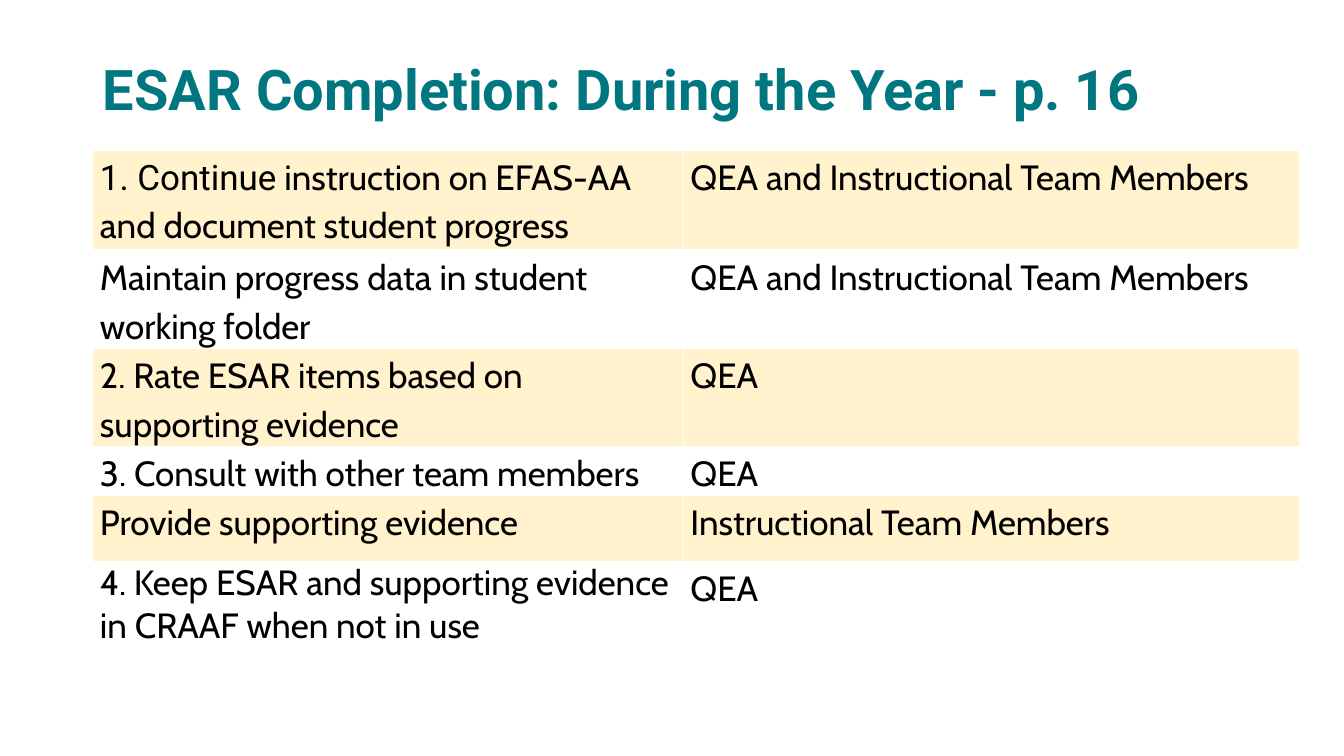
from dataclasses import dataclass

from lxml.etree import SubElement as Sub
from pptx import Presentation
from pptx.dml.color import RGBColor as Rgb
from pptx.enum.text import MSO_ANCHOR as Anchor, MSO_AUTO_SIZE as Fit, PP_ALIGN as Align
from pptx.oxml.ns import qn
from pptx.util import Cm, Pt


@dataclass(frozen=True)
class Theme:
    teal: str = "007780"
    ink: str = "000000"
    band: str = "FFF2CC"
    rule: str = "FFFFFF"
    head: str = "Roboto"
    body: str = "Cabin"
    big: int = 40
    text: int = 25


LOOK = Theme()
TEAM = "QEA and Instructional Team Members"
STEPS = [
    (2.54, ["1. Continue", " instruction on EFAS-AA and document student progress"], TEAM),
    (2.26, ["Maintain progress data in student working folder"], TEAM),
    (2.26, ["2. Rate ESAR items based on supporting evidence"], "QEA"),
    (1.09, ["3. Consult with other team members"], "QEA"),
    (1.68, ["Provide supporting evidence"], "Instructional Team Members"),
    (2.03, ["4. Keep ESAR and supporting evidence in CRAAF when not in use"], "QEA"),
]
LOOSE = {"line_spacing": 1.15, "space_after": Pt(10)}
TIGHT = {"line_spacing": 1.0, "space_after": Pt(0)}


def style(item, form):
    for key, value in form.items():
        setattr(item, key, value)


def add_run(para, text, face, size, tint, bold=False):
    run = para.add_run()
    run.text = text
    style(run.font, {"name": face, "size": Pt(size), "bold": bold})
    run.font.color.rgb = Rgb.from_string(tint)


def add_title(slide, text):
    title = slide.shapes.title
    style(title, {"left": Cm(2.34), "top": Cm(0.48), "width": Cm(29.64), "height": Cm(3.68)})
    frame = title.text_frame
    style(frame, {"auto_size": Fit.NONE, "word_wrap": True, "vertical_anchor": Anchor.MIDDLE})
    para = frame.paragraphs[0]
    style(para, {"alignment": Align.LEFT, "line_spacing": 0.9})
    add_run(para, text, LOOK.head, LOOK.big, LOOK.teal, True)


def add_rules(cell, base):
    props = cell._tc.get_or_add_tcPr()
    for side, width in (("L", 1), ("R", 1), ("T", 1), ("B", base)):
        line = Sub(props, qn(f"a:ln{side}"), w=str(Pt(width)))
        fill = Sub(line, qn("a:solidFill"))
        Sub(fill, qn("a:srgbClr"), val=LOOK.rule)


def fill_cell(cell, parts, form, band, base):
    style(cell, {"margin_left": Cm(0.18), "margin_right": Cm(0.18),
                 "margin_top": 0, "margin_bottom": 0})
    add_rules(cell, base)
    if band:
        cell.fill.solid()
        cell.fill.fore_color.rgb = Rgb.from_string(LOOK.band)
    else:
        cell.fill.background()
    para = cell.text_frame.paragraphs[0]
    style(para, form)
    for part in parts:
        face = LOOK.head if part == "1. Continue" else LOOK.body
        add_run(para, part, face, LOOK.text, LOOK.ink)


def add_steps(slide):
    widths = (14.88, 15.52)
    tall = sum(step[0] for step in STEPS)
    frame = slide.shapes.add_table(len(STEPS), 2, Cm(2.34), Cm(3.78), Cm(sum(widths)), Cm(tall))
    table = frame.table
    style(table, {"first_row": False, "horz_banding": False})
    for col, width in zip(table.columns, widths):
        col.width = Cm(width)
    for num, (high, task, who) in enumerate(STEPS):
        table.rows[num].height = Cm(high)
        band, base = num % 2 == 0, 1 if num else 3
        form = TIGHT if num == len(STEPS) - 1 else LOOSE
        fill_cell(table.cell(num, 0), task, form, band, base)
        fill_cell(table.cell(num, 1), [who], LOOSE, band, base)


def main():
    deck = Presentation()
    style(deck, {"slide_width": Cm(33.87), "slide_height": Cm(19.05)})
    slide = deck.slides.add_slide(deck.slide_layouts[5])
    add_title(slide, "ESAR Completion: During the Year - p. 16")
    add_steps(slide)
    deck.save("out.pptx")


if __name__ == "__main__":
    main()
